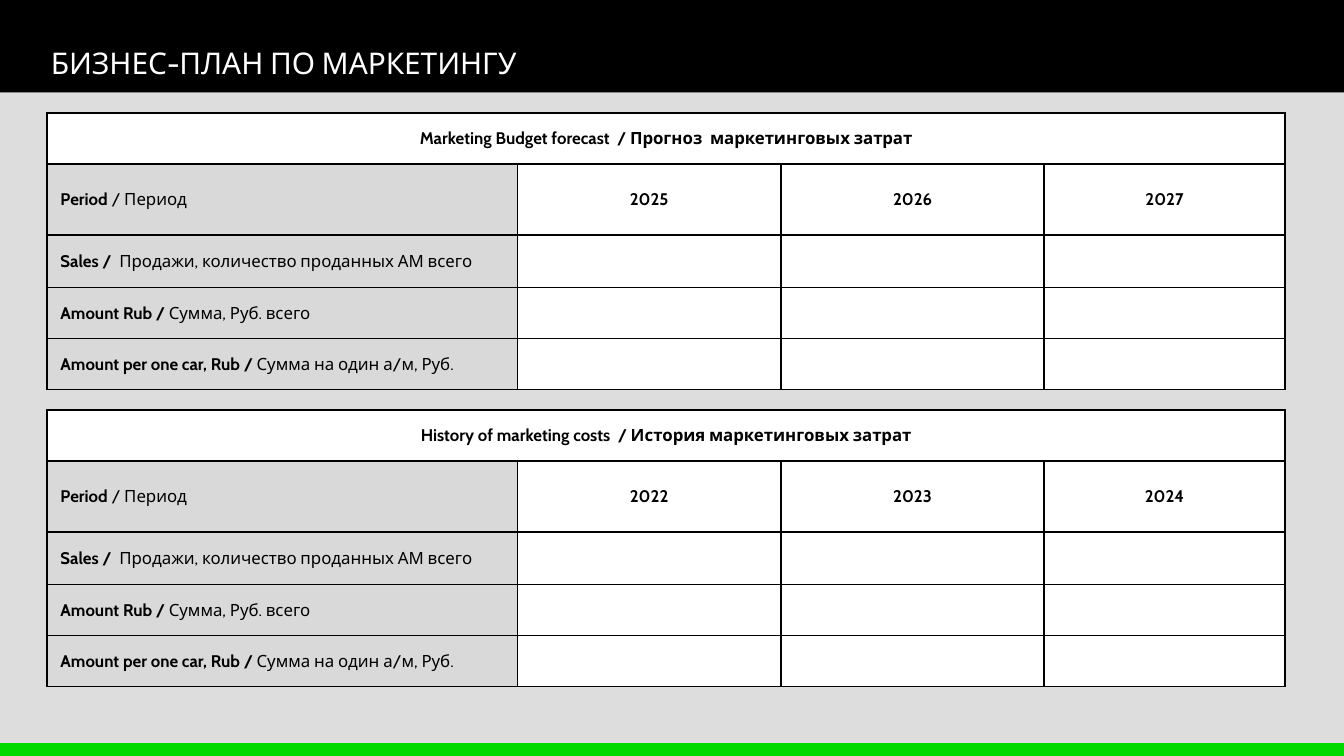
"""Build the marketing business plan slide with its forecast and history tables."""
from lxml import etree
from pptx import Presentation
from pptx import util as u
from pptx.dml.color import RGBColor
from pptx.enum import shapes, text
from pptx.oxml.ns import qn

COLORS = {
    "black": "000000",
    "white": "FFFFFF",
    "backdrop": "DDDDDD",
    "label": "D9D9D9",
    "green": "00D900",
}
FONT = "Cabin"
COLUMNS = [3.5, 1.96, 1.96, 1.79]
ROWS = [0.38, 0.53, 0.39, 0.38, 0.38]
LABELS = [
    ("Period ", "/ Период"),
    ("Sales /  ", "Продажи, количество проданных АМ всего"),
    ("Amount Rub / ", "Сумма, Руб. всего"),
    ("Amount per one car, Rub / ", "Сумма на один а/м, Руб."),
]
TABLES = [
    (0.84, "Marketing Budget forecast  / Прогноз  маркетинговых затрат", ["2025", "2026", "2027"]),
    (3.05, "History of marketing costs  / История маркетинговых затрат", ["2022", "2023", "2024"]),
]


def color(name):
    return RGBColor.from_string(COLORS[name])


def add_band(page, top, height, fill):
    band = page.shapes.add_shape(
        shapes.MSO_SHAPE.RECTANGLE, 0, u.Inches(top), u.Inches(10), u.Inches(height))
    band.shadow.inherit = False
    band.fill.solid()
    band.fill.fore_color.rgb = color(fill)
    band.line.fill.background()


def add_span(para, words, size=9, bold=False, ink="black"):
    span = para.add_run()
    span.text = words
    for name, value in {"name": FONT, "size": u.Pt(size), "bold": bold}.items():
        setattr(span.font, name, value)
    span.font.color.rgb = color(ink)


def add_title(page, words):
    box = page.shapes.add_textbox(u.Inches(0.28), u.Inches(0.02), u.Inches(5.63), u.Inches(0.56))
    box.text_frame.word_wrap = True
    box.text_frame.auto_size = text.MSO_AUTO_SIZE.SHAPE_TO_FIT_TEXT
    para = box.text_frame.paragraphs[0]
    para.line_spacing = 2.0
    add_span(para, words, size=16, ink="white")


def add_borders(cell):
    properties = cell._tc.get_or_add_tcPr()
    for side in ("lnL", "lnR", "lnT", "lnB"):
        line = etree.SubElement(properties, qn(f"a:{side}"), w=str(u.Pt(1)))
        fill = etree.SubElement(line, qn("a:solidFill"))
        etree.SubElement(fill, qn("a:srgbClr"), val=COLORS["black"])


def style_cell(cell, fill, margin):
    add_borders(cell)
    cell.fill.solid()
    cell.fill.fore_color.rgb = color(fill)
    layout = {
        "vertical_anchor": text.MSO_ANCHOR.MIDDLE,
        "margin_left": u.Inches(0.1),
        "margin_right": u.Inches(0.1),
        "margin_top": u.Inches(margin),
        "margin_bottom": u.Inches(margin),
    }
    for name, value in layout.items():
        setattr(cell, name, value)


def add_heading(cell, words):
    para = cell.text_frame.paragraphs[0]
    para.alignment = text.PP_ALIGN.CENTER
    add_span(para, words, bold=True)


def add_budget_table(page, top, heading, years):
    frame = page.shapes.add_table(
        len(ROWS), len(COLUMNS), u.Inches(0.35), u.Inches(top),
        u.Inches(sum(COLUMNS)), u.Inches(sum(ROWS)))
    table = frame.table
    for column, width in zip(table.columns, COLUMNS):
        column.width = u.Inches(width)
    for index, (row, height) in enumerate(zip(table.rows, ROWS)):
        row.height = u.Inches(height)
        for position, cell in enumerate(row.cells):
            is_label = index > 0 and position == 0
            style_cell(cell, "label" if is_label else "white", 0.04 if index < 2 else 0.03)
    table.cell(0, 0).merge(table.cell(0, len(COLUMNS) - 1))
    add_heading(table.cell(0, 0), heading)
    for position, year in enumerate(years, 1):
        add_heading(table.cell(1, position), year)
    for index, (english, russian) in enumerate(LABELS, 1):
        para = table.cell(index, 0).text_frame.paragraphs[0]
        add_span(para, english, bold=True)
        add_span(para, russian)


def main():
    deck = Presentation()
    deck.slide_width = u.Inches(10)
    deck.slide_height = deck.slide_width * 9 // 16
    page = deck.slides.add_slide(deck.slide_layouts[6])
    add_band(page, 0, 0.69, "black")
    add_band(page, 0.69, 4.94, "backdrop")
    add_band(page, 5.53, 0.1, "green")
    add_title(page, "БИЗНЕС-ПЛАН ПО МАРКЕТИНГУ")
    for top, heading, years in TABLES:
        add_budget_table(page, top, heading, years)
    deck.save("out.pptx")


if __name__ == "__main__":
    main()
